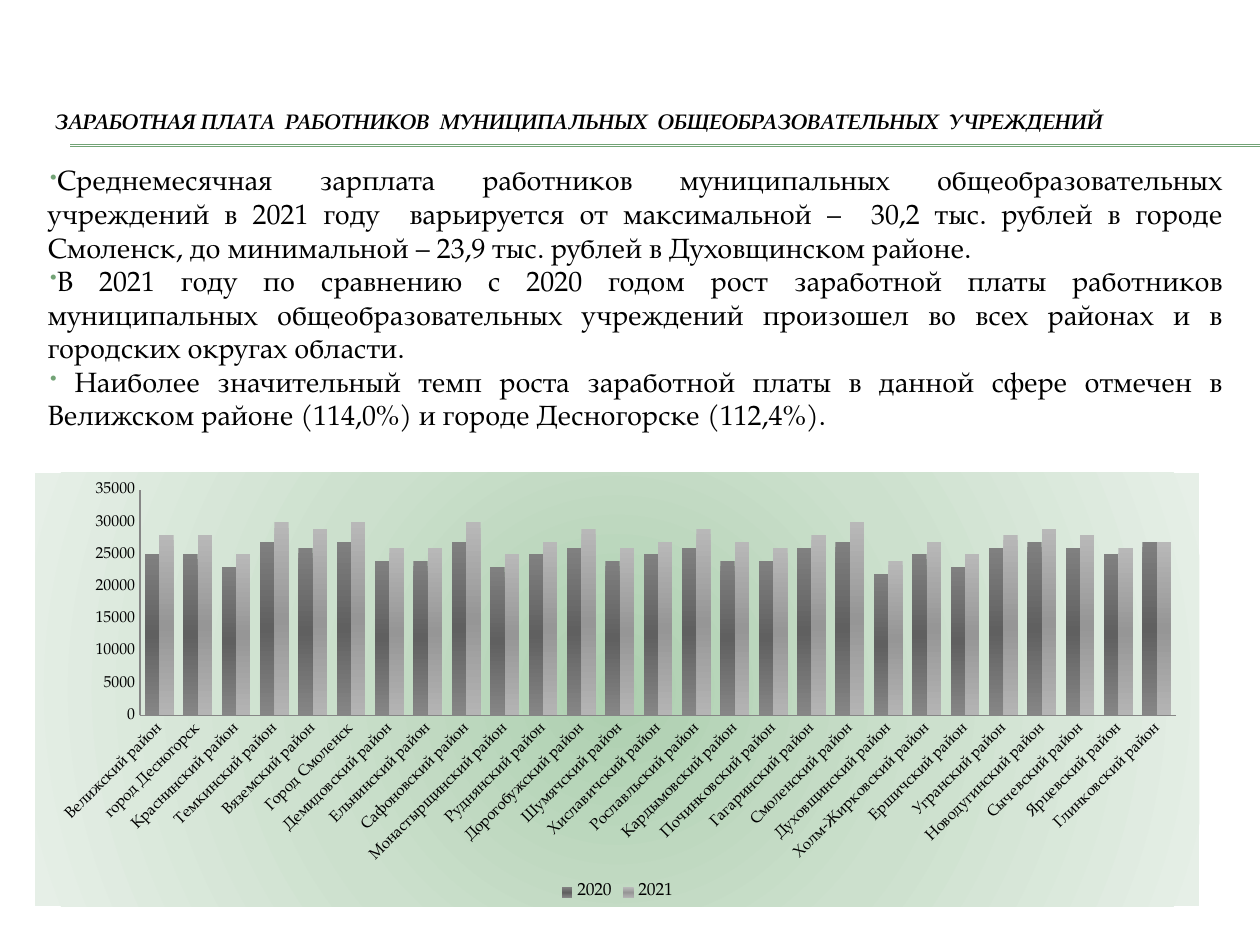
from lxml import etree
from pptx import Presentation
from pptx.chart.data import CategoryChartData
from pptx.dml.color import RGBColor
from pptx.enum import chart as ch, shapes, text
from pptx.oxml import parse_xml
from pptx.oxml.ns import nsdecls, qn
from pptx.util import Cm, Pt

FONT = "TeX Gyre Pagella"
GREEN = "72A376"
TITLE = ("ЗАРАБОТНАЯ ПЛАТА  РАБОТНИКОВ  МУНИЦИПАЛЬНЫХ  "
         "ОБЩЕОБРАЗОВАТЕЛЬНЫХ  УЧРЕЖДЕНИЙ")
BULLETS = [
    "Среднемесячная зарплата работников муниципальных общеобразовательных "
    "учреждений в 2021 году  варьируется от максимальной –  30,2 тыс. рублей "
    "в городе Смоленск, до минимальной – 23,9 тыс. рублей в Духовщинском районе. ",
    "В 2021 году по сравнению с 2020 годом рост заработной платы работников "
    "муниципальных общеобразовательных учреждений произошел во всех районах "
    "и в городских округах области.",
    " Наиболее значительный темп роста заработной платы в данной сфере отмечен "
    "в Велижском районе (114,0%) и городе Десногорске (112,4%).",
]
# District, salary in 2020 and in 2021, thousand roubles
SALARIES = [
    ("Велижский район", 25, 28), ("город Десногорск", 25, 28),
    ("Краснинский район", 23, 25), ("Темкинский район", 27, 30),
    ("Вяземский район", 26, 29), ("Город Смоленск", 27, 30),
    ("Демидовский район", 24, 26), ("Ельнинский район", 24, 26),
    ("Сафоновский район", 27, 30), ("Монастырщинский район", 23, 25),
    ("Руднянский район", 25, 27), ("Дорогобужский район", 26, 29),
    ("Шумячский район", 24, 26), ("Хиславичский район", 25, 27),
    ("Рославльский район", 26, 29), ("Кардымовский район", 24, 27),
    ("Починковский район", 24, 26), ("Гагаринский район", 26, 28),
    ("Смоленский район", 27, 30), ("Духовщинский район", 22, 24),
    ("Холм-Жирковский район", 25, 27), ("Ершичский район", 23, 25),
    ("Угранский район", 26, 28), ("Новодугинский район", 27, 29),
    ("Сычевский район", 26, 28), ("Ярцевский район", 25, 26),
    ("Глинковский район", 27, 27),
]


def rgb(value):
    return RGBColor.from_string(value)


def set_font(font, size, color="000000"):
    font.name, font.size = FONT, Pt(size)
    font.color.rgb = rgb(color)


def gradient(stops, direction):
    """Gradient fill from (percent, colour) stops and a direction element."""
    gs = "".join(f'<a:gs pos="{pos * 1000}"><a:srgbClr val="{color}"/></a:gs>'
                 for pos, color in stops)
    return parse_xml(f'<a:gradFill {nsdecls("a")} rotWithShape="1">'
                     f'<a:gsLst>{gs}</a:gsLst>{direction}</a:gradFill>')


def add_rule(s, y):
    sp = s.shapes.add_connector(shapes.MSO_CONNECTOR.STRAIGHT,
                                Cm(1.42), Cm(y), Cm(25.4), Cm(y))
    sp.line.color.rgb = rgb(GREEN)
    sp.line.width = Pt(0.75)
    etree.SubElement(sp._element.spPr, qn("a:effectLst"))


def set_title(s):
    sp = s.shapes.title
    sp.left, sp.top, sp.width, sp.height = Cm(0.84), Cm(1.27), Cm(24.13), Cm(2.34)
    tf = sp.text_frame
    tf.vertical_anchor = text.MSO_ANCHOR.MIDDLE
    p = tf.paragraphs[0]
    p.alignment = text.PP_ALIGN.LEFT
    r = p.add_run()
    r.text = TITLE
    set_font(r.font, 12)
    r.font.bold = r.font.italic = True


def add_bullets(s):
    tf = s.shapes.add_textbox(Cm(0.71), Cm(3.16), Cm(24.21), Cm(6.81)).text_frame
    tf.word_wrap = True
    for i, line in enumerate(BULLETS):
        p = tf.paragraphs[0] if i == 0 else tf.add_paragraph()
        p.alignment = text.PP_ALIGN.JUSTIFY
        pPr = p._p.get_or_add_pPr()
        pPr.set("marL", "0")
        pPr.set("indent", str(Cm(0.05)))
        color = etree.SubElement(pPr, qn("a:buClr"))
        etree.SubElement(color, qn("a:srgbClr"), val=GREEN)
        etree.SubElement(pPr, qn("a:buSzPct"), val="70000")
        etree.SubElement(pPr, qn("a:buChar"), char="•")
        r = p.add_run()
        r.text = line
        set_font(r.font, 16)


def format_axis(axis):
    axis.has_major_gridlines = False
    axis.major_tick_mark = axis.minor_tick_mark = ch.XL_TICK_MARK.NONE
    axis.format.line.color.rgb = rgb("868686")
    set_font(axis.tick_labels.font, 9)


def set_plot_area(chart, **fractions):
    """Place the inner plot area as fractions of the chart."""
    plot_area = chart._chartSpace.chart.plotArea
    for old in plot_area.findall(qn("c:layout")):
        plot_area.remove(old)
    sizes = "".join(f'<c:{k} val="{v}"/>' for k, v in fractions.items())
    plot_area.insert(0, parse_xml(
        f'<c:layout {nsdecls("c")}><c:manualLayout><c:layoutTarget val="inner"/>'
        f'<c:xMode val="edge"/><c:yMode val="edge"/>{sizes}'
        '</c:manualLayout></c:layout>'))


def add_salary_chart(s):
    names, *years = zip(*SALARIES)
    data = CategoryChartData(number_format="0")
    data.categories = names
    for year, values in zip(("2020", "2021"), years):
        data.add_series(year, [v * 1000 for v in values])
    chart = s.shapes.add_chart(ch.XL_CHART_TYPE.COLUMN_CLUSTERED, Cm(0.71), Cm(9.53),
                               Cm(23.47), Cm(8.74), data).chart
    set_font(chart.font, 18)
    chart.has_title = False

    # Axes and legend
    format_axis(chart.category_axis)
    format_axis(chart.value_axis)
    chart.value_axis.minimum_scale, chart.value_axis.maximum_scale = 0, 35000
    chart.value_axis.major_unit = 5000
    labels = chart.category_axis._element.find(qn("c:txPr"))
    labels.find(qn("a:bodyPr")).set("rot", str(-45 * 60000))
    chart.has_legend = True
    chart.legend.position = ch.XL_LEGEND_POSITION.BOTTOM
    chart.legend.include_in_layout = False
    set_font(chart.legend.font, 10)
    set_plot_area(chart, x=0.09, y=0.04, w=0.89, h=0.52)

    # Columns
    plot = chart.plots[0]
    plot.gap_width, plot.overlap = 67, 0
    plot.vary_by_categories = False
    shades = [("808080", "606060", "868686"), ("B8B8B8", "969696", "B4B4B4")]
    for series, colors in zip(plot.series, shades):
        series.format.line.fill.background()
        spPr = series._element.find(qn("c:spPr"))
        spPr.insert(0, gradient(zip((0, 50, 100), colors),
                                '<a:lin ang="5400000" scaled="0"/>'))

    # Chart background
    spPr = parse_xml(f'<c:spPr {nsdecls("c", "a")}><a:ln><a:noFill/></a:ln></c:spPr>')
    center = '<a:fillToRect l="50000" t="50000" r="50000" b="50000"/>'
    spPr.insert(0, gradient([(0, "ADCFAF"), (50, "CCE0CD"), (100, "E6EFE7")],
                            f'<a:path path="circle">{center}</a:path>'))
    chart._chartSpace.chart.addnext(spPr)


def main():
    prs = Presentation()
    prs.slide_width, prs.slide_height = Cm(25.4), Cm(19.05)
    s = prs.slides.add_slide(prs.slide_layouts[5])
    for y in (2.92, 2.95):
        add_rule(s, y)
    set_title(s)
    add_bullets(s)
    add_salary_chart(s)
    prs.save("out.pptx")


if __name__ == "__main__":
    main()
